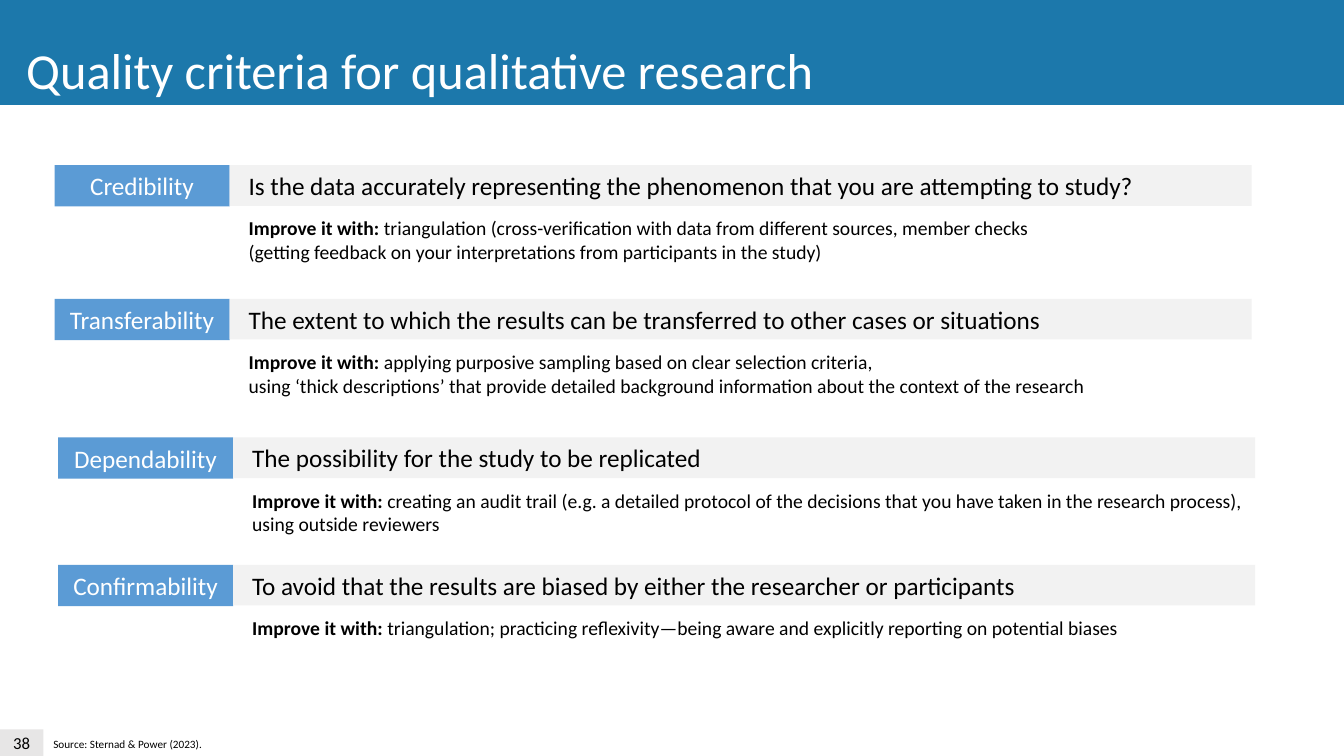
from pptx import Presentation
from pptx.dml.color import RGBColor
from pptx.enum import shapes, text
from pptx.util import Pt

FONT = "Calibri"
COLORS = {
    "banner": "1C78AB",
    "label": "5B9BD5",
    "bar": "F2F2F2",
    "number": "E7E6E6",
    "black": "000000",
    "white": "FFFFFF",
}

# left, top, name, question, width of the advice, advice, space after the advice
CRITERIA = [
    (39, 118, "Credibility",
     "Is the data accurately representing the phenomenon that you are attempting to study?",
     572,
     "triangulation (cross-verification with data from different sources, member checks "
     "(getting feedback on your interpretations from participants in the study)", 6),
    (39, 213.5, "Transferability",
     "The extent to which the results can be transferred to other cases or situations",
     650,
     "applying purposive sampling based on clear selection criteria,\n"
     "using ʻthick descriptionsʼ that provide detailed background information "
     "about the context of the research", 6),
    (41.5, 312.5, "Dependability",
     "The possibility for the study to be replicated",
     744,
     "creating an audit trail (e.g. a detailed protocol of the decisions that you have "
     "taken in the research process), using outside reviewers", 0),
    (41.5, 403.5, "Confirmability",
     "To avoid that the results are biased by either the researcher or participants",
     744,
     "triangulation; practicing reflexivity—being aware and explicitly reporting on "
     "potential biases", 0),
]


def rgb(name):
    return RGBColor.from_string(COLORS[name])


def format_runs(p, size, color):
    for r in p.runs:
        r.font.name = FONT
        r.font.size = Pt(size)
        r.font.color.rgb = rgb(color)


def add_box(parent, left, top, width, height, fill, label="", size=18, color="white"):
    """Add a plain rectangle, with centred text if there is a label."""
    sp = parent.add_shape(shapes.MSO_SHAPE.RECTANGLE,
                          Pt(left), Pt(top), Pt(width), Pt(height))
    sp.shadow.inherit = False
    sp.fill.solid()
    sp.fill.fore_color.rgb = rgb(fill)
    sp.line.fill.background()
    if label:
        tf = sp.text_frame
        tf.margin_left = tf.margin_right = 0
        tf.vertical_anchor = text.MSO_ANCHOR.MIDDLE
        tf.text = label
        p = tf.paragraphs[0]
        p.alignment = text.PP_ALIGN.CENTER
        format_runs(p, size, color)
    return sp


def add_text(parent, left, top, width, height, content, size, wrap=True):
    tf = parent.add_textbox(Pt(left), Pt(top), Pt(width), Pt(height)).text_frame
    tf.word_wrap = wrap
    tf.text = content
    p = tf.paragraphs[0]
    format_runs(p, size, "black")
    return p


def add_criterion(s, left, top, name, question, width, advice, space_after):
    parent = s.shapes.add_group_shape().shapes
    add_box(parent, left, top, 125, 29.4, "label", name)
    add_box(parent, left + 125, top, 730, 29, "bar")
    add_text(parent, left + 131.5, top, 762, 29, question, 18)
    p = add_text(parent, left + 131.5, top + 33, width, 41, "Improve it with: ", 14)
    p.runs[0].font.bold = True
    p.space_after = Pt(space_after)
    for i, line in enumerate(advice.split("\n")):
        if i:
            p.add_line_break()
        p.add_run().text = line
    format_runs(p, 14, "black")


def add_title(s, content):
    """Fill the title placeholder and lay the banner behind it."""
    title = s.shapes.title
    banner = add_box(s.shapes, 0, 0, 960, 75, "banner")
    title.element.addprevious(banner.element)
    title.left, title.top, title.width, title.height = Pt(11.5), Pt(24), Pt(582), Pt(51)
    tf = title.text_frame
    tf.text = content
    tf.word_wrap = False
    tf.auto_size = text.MSO_AUTO_SIZE.NONE
    tf.vertical_anchor = text.MSO_ANCHOR.TOP
    p = tf.paragraphs[0]
    p.alignment = text.PP_ALIGN.LEFT
    format_runs(p, 36, "white")


def main():
    prs = Presentation()
    prs.slide_width, prs.slide_height = Pt(960), Pt(540)
    s = prs.slides.add_slide(prs.slide_layouts[5])
    add_title(s, "Quality criteria for qualitative research")
    for criterion in CRITERIA:
        add_criterion(s, *criterion)
    add_box(s.shapes, 0, 521, 31, 19, "number", "38", 12, "black")
    add_text(s.shapes, 31, 523, 122, 17, "Source: Sternad & Power (2023).", 8, wrap=False)
    prs.save("out.pptx")


if __name__ == "__main__":
    main()
